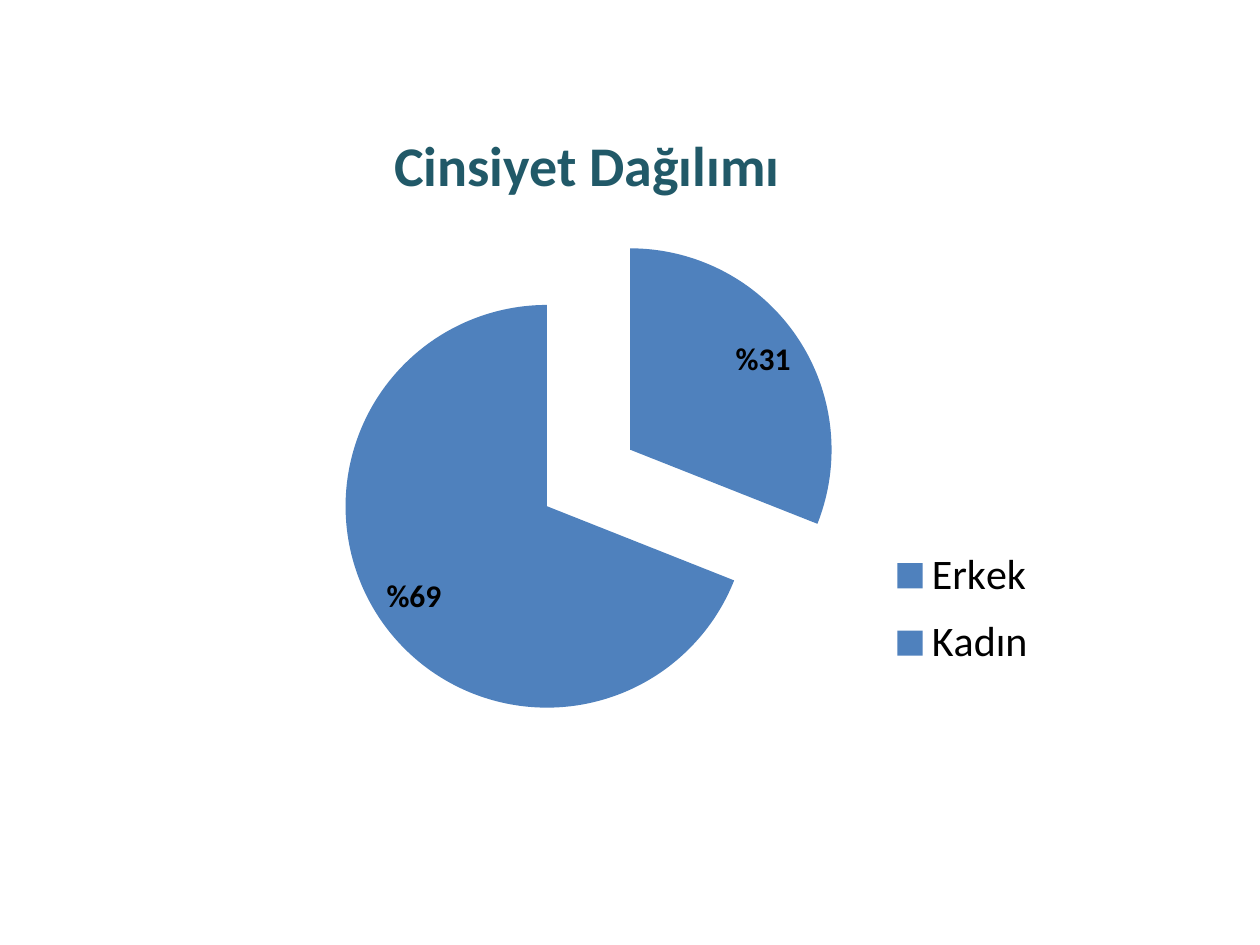
from lxml import etree
from pptx import Presentation, util as u
from pptx.chart.data import CategoryChartData
from pptx.dml.color import RGBColor
from pptx.enum import chart as ch
from pptx.oxml.ns import qn

WIDTH, HEIGHT = u.Inches(10), u.Inches(7.5)
FONT = "Calibri"
BLUE, TEAL, BLACK = "4F81BD", "215968", "000000"


def colour(value):
    """Turn a hex string into a colour."""
    return RGBColor.from_string(value)


def box(left, top, width, height):
    """Turn shares of the slide into lengths."""
    return (int(left * WIDTH), int(top * HEIGHT),
            int(width * WIDTH), int(height * HEIGHT))


def style(font, size, ink, bold=False):
    """Set the typeface, size, colour and weight of a font."""
    font.name, font.size, font.bold = FONT, u.Pt(size), bold
    font.color.rgb = colour(ink)


def manual_layout(bounds, inner=False):
    """Build a chart layout from shares of the chart area."""
    layout = etree.Element(qn("c:layout"))
    manual = etree.SubElement(layout, qn("c:manualLayout"))
    settings = [("layoutTarget", "inner")] if inner else []
    settings += [("xMode", "edge"), ("yMode", "edge"), *zip("xywh", bounds)]
    for tag, value in settings:
        etree.SubElement(manual, qn("c:" + tag)).set("val", str(value))
    return layout


def add_gender_pie(slide, bounds):
    """Place the exploded pie with its labels and legend."""
    data = CategoryChartData()
    data.categories = ["Erkek", "Kadın"]
    data.add_series("Series 1", (31, 69))
    pie = slide.shapes.add_chart(ch.XL_CHART_TYPE.PIE, *bounds, data).chart
    pie.has_title = False
    style(pie.font, 18, BLACK)

    plot = pie.plots[0]
    plot.vary_by_categories = False
    shares = plot.series[0]
    shares.format.fill.solid()
    shares.format.fill.fore_color.rgb = colour(BLUE)
    explosion = etree.Element(qn("c:explosion"), val="25")
    shares._element.find(qn("c:spPr")).addnext(explosion)

    labels = shares.data_labels
    labels.show_value = True
    labels.number_format = '"%"0'
    labels.number_format_is_linked = False
    labels.position = ch.XL_LABEL_POSITION.INSIDE_END
    style(labels.font, 18, BLACK, bold=True)

    pie.has_legend = True
    legend = pie.legend
    legend.position = ch.XL_LEGEND_POSITION.RIGHT
    legend.include_in_layout = False
    style(legend.font, 24, BLACK)
    legend._element.find(qn("c:legendPos")).addnext(
        manual_layout((0.8, 0.61, 0.19, 0.27)))

    plot_area = pie._chartSpace.chart.plotArea
    for default in plot_area.findall(qn("c:layout")):
        plot_area.remove(default)
    plot_area.insert(0, manual_layout((0.02, 0.06, 0.86, 0.9), inner=True))


def add_heading(slide, bounds):
    """Place the heading above the pie."""
    frame = slide.shapes.add_textbox(*bounds).text_frame
    frame.word_wrap = True
    frame.text = "Cinsiyet Dağılımı"
    style(frame.paragraphs[0].runs[0].font, 32, TEAL, bold=True)


def main():
    """Build and save the slide."""
    deck = Presentation()
    deck.slide_width, deck.slide_height = WIDTH, HEIGHT
    slide = deck.slides.add_slide(deck.slide_layouts[6])
    add_gender_pie(slide, box(0.167, 0.204, 0.667, 0.592))
    add_heading(slide, box(0.303, 0.132, 0.331, 0.073))
    deck.save("out.pptx")


if __name__ == "__main__":
    main()
